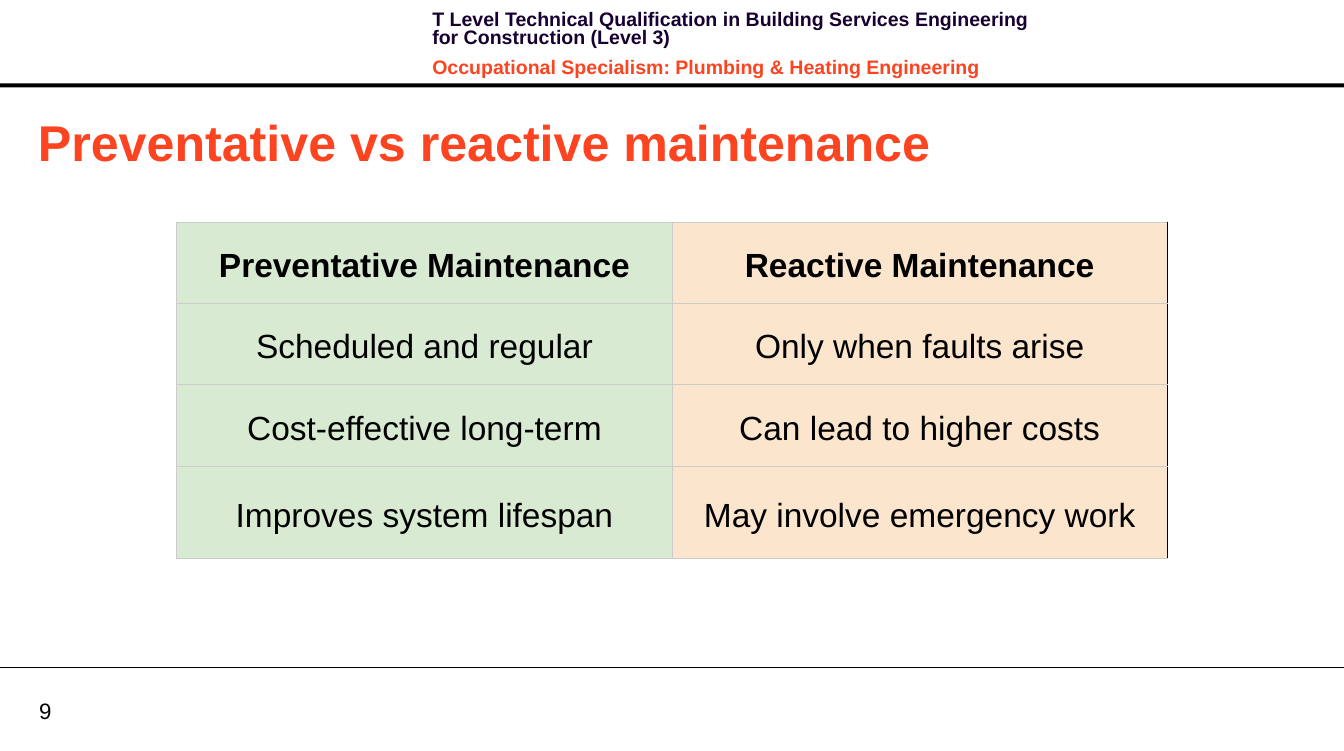
from lxml import etree
from pptx import Presentation
from pptx.dml.color import RGBColor
from pptx.enum.shapes import MSO_CONNECTOR, MSO_SHAPE
from pptx.enum.text import MSO_ANCHOR, PP_ALIGN
from pptx.oxml.ns import qn
from pptx.util import Cm, Pt

TOP, MIDDLE = MSO_ANCHOR.TOP, MSO_ANCHOR.MIDDLE
CENTER = PP_ALIGN.CENTER
RECTANGLE, STRAIGHT = MSO_SHAPE.RECTANGLE, MSO_CONNECTOR.STRAIGHT

BLACK = RGBColor(0x00, 0x00, 0x00)
WHITE = RGBColor(0xFF, 0xFF, 0xFF)
NAVY = RGBColor(0x17, 0x01, 0x30)
ORANGE = RGBColor(0xFC, 0x44, 0x21)
GREEN = RGBColor(0xD9, 0xEA, 0xD3)
PEACH = RGBColor(0xFC, 0xE5, 0xCD)
GREY = RGBColor(0xCC, 0xCC, 0xCC)

FONT = "Arial"
SLIDE_W, SLIDE_H = 34.01, 19

HEADER = [
    ("T Level Technical Qualification in Building Services Engineering "
     "for Construction (Level 3)", NAVY),
    ("Occupational Specialism: Plumbing & Heating Engineering", ORANGE),
]
TITLE = "Preventative vs reactive maintenance"
PAGE = "9"
ROWS = [
    ("Preventative Maintenance", "Reactive Maintenance"),
    ("Scheduled and regular", "Only when faults arise"),
    ("Cost-effective long-term", "Can lead to higher costs"),
    ("Improves system lifespan", "May involve emergency work"),
]
COLUMNS = [
    {"fill": GREEN, "margin": 0.08, "right": GREY},
    {"fill": PEACH, "margin": 0.25, "right": BLACK},
]
COL_W = 12.53
ROW_H = [2.06, 2.06, 2.06, 2.34]


def add_run(p, text, size, color, bold=False):
    r = p.add_run()
    r.text = text
    r.font.name = FONT
    r.font.size = Pt(size)
    r.font.bold = bold
    r.font.color.rgb = color


def add_box(s, left, top, width, height, anchor, margin_x=0.25, margin_y=0.13):
    tf = s.shapes.add_textbox(Cm(left), Cm(top), Cm(width), Cm(height)).text_frame
    tf.word_wrap = True
    tf.vertical_anchor = anchor
    tf.margin_left = tf.margin_right = Cm(margin_x)
    tf.margin_top = tf.margin_bottom = Cm(margin_y)
    return tf


def set_borders(cell, right):
    tcPr = cell._tc.get_or_add_tcPr()
    sides = [("a:lnL", GREY), ("a:lnR", right), ("a:lnT", GREY), ("a:lnB", GREY)]
    for i, (tag, color) in enumerate(sides):
        ln = etree.Element(qn(tag), w=str(Pt(0.83)))
        fill = etree.SubElement(ln, qn("a:solidFill"))
        etree.SubElement(fill, qn("a:srgbClr"), val=str(color))
        tcPr.insert(i, ln)


def add_frame(s):
    bar = s.shapes.add_shape(RECTANGLE, 0, Cm(2.11), Cm(SLIDE_W), Cm(0.1))
    bar.shadow.inherit = False
    bar.fill.solid()
    bar.fill.fore_color.rgb = BLACK
    bar.line.fill.background()

    rule = s.shapes.add_connector(STRAIGHT, 0, Cm(16.9), Cm(SLIDE_W), Cm(16.9))
    rule.line.color.rgb = BLACK
    rule.line.width = Pt(0.75)
    etree.SubElement(rule._element.spPr, qn("a:effectLst"))

    tf = add_box(s, 10.69, 0.18, 16.18, 1.63, TOP)
    for i, (text, color) in enumerate(HEADER):
        p = tf.add_paragraph() if i else tf.paragraphs[0]
        p.line_spacing = Pt(13.1)
        p.space_before = Pt(4 if i else 0)
        p.space_after = Pt(4)
        add_run(p, text, 14, color, True)

    tf = add_box(s, 0.99, 17.63, 1.63, 0.69, MIDDLE, 0, 0)
    add_run(tf.paragraphs[0], PAGE, 16, BLACK)


def add_comparison(s):
    width = COL_W * len(COLUMNS)
    frame = s.shapes.add_table(len(ROWS), len(COLUMNS), Cm((SLIDE_W - width) / 2),
                               Cm(5.62), Cm(width), Cm(sum(ROW_H)))
    table = frame.table
    table.first_row = table.horz_banding = False
    for column in table.columns:
        column.width = Cm(COL_W)
    for i, (texts, height) in enumerate(zip(ROWS, ROW_H)):
        table.rows[i].height = Cm(height)
        for j, (text, style) in enumerate(zip(texts, COLUMNS)):
            cell = table.cell(i, j)
            cell.fill.solid()
            cell.fill.fore_color.rgb = style["fill"]
            cell.vertical_anchor = MIDDLE
            cell.margin_left = cell.margin_right = Cm(style["margin"])
            cell.margin_top = cell.margin_bottom = Cm(0.05)
            set_borders(cell, style["right"])
            p = cell.text_frame.paragraphs[0]
            p.alignment = CENTER
            p.line_spacing = 1.15
            add_run(p, text, 24, BLACK, i == 0)


def main():
    prs = Presentation()
    prs.slide_width, prs.slide_height = Cm(SLIDE_W), Cm(SLIDE_H)
    s = prs.slides.add_slide(prs.slide_layouts[6])
    s.background.fill.solid()
    s.background.fill.fore_color.rgb = WHITE
    add_frame(s)
    tf = add_box(s, 0.71, 2.69, 32.31, 1.8, MIDDLE)
    add_run(tf.paragraphs[0], TITLE, 36, ORANGE, True)
    add_comparison(s)
    prs.save("out.pptx")


if __name__ == "__main__":
    main()
